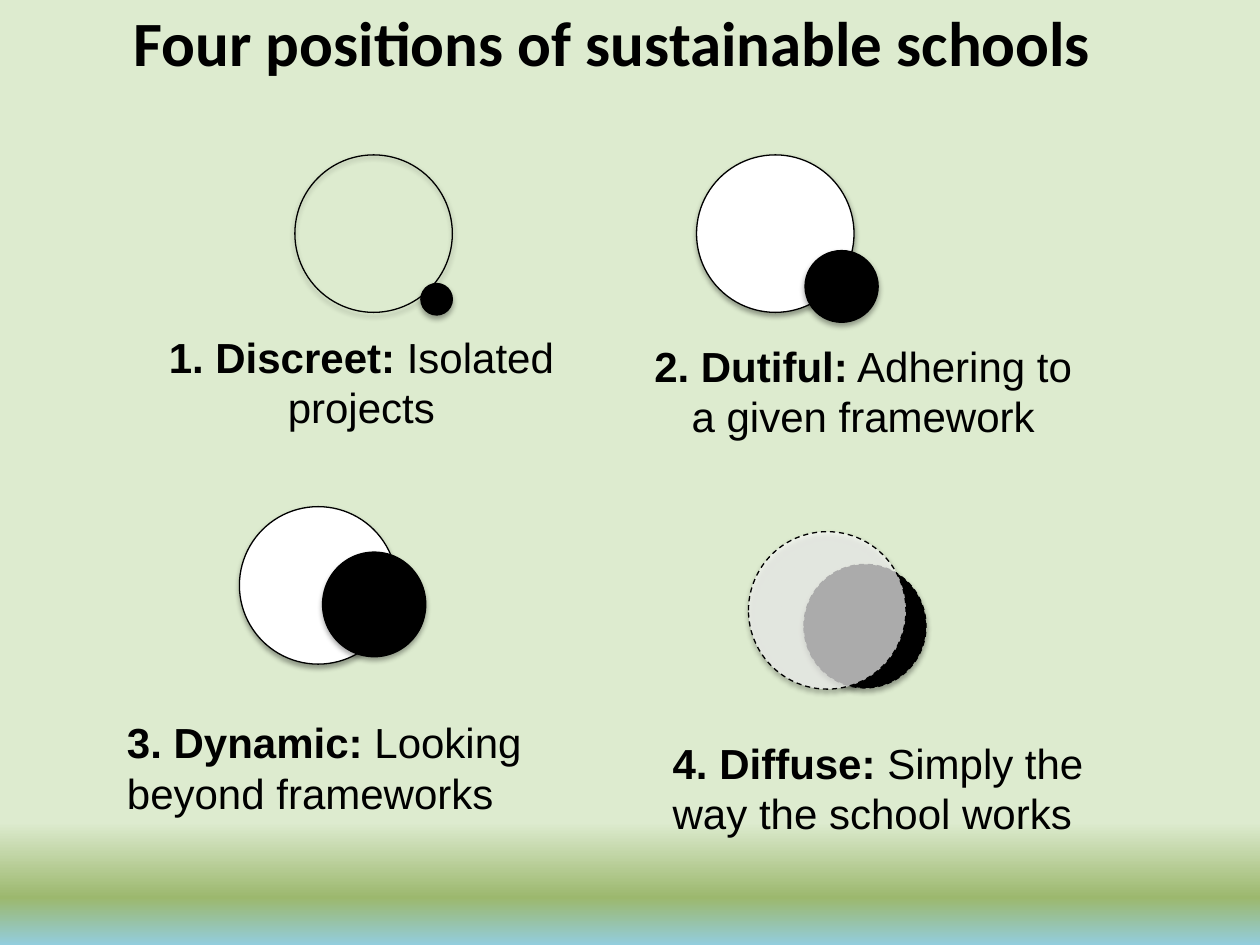
import lxml.etree
import pptx
import pptx.dml.color
import pptx.enum.dml
import pptx.enum.shapes
import pptx.enum.text
import pptx.oxml
import pptx.oxml.ns
import pptx.util

Pt = pptx.util.Pt
RGBColor = pptx.dml.color.RGBColor
ALIGN = pptx.enum.text.PP_ALIGN
ANCHOR = pptx.enum.text.MSO_ANCHOR
qn = pptx.oxml.ns.qn

BLACK = RGBColor(0x00, 0x00, 0x00)
WHITE = RGBColor(0xFF, 0xFF, 0xFF)
PALE_GREEN = RGBColor(0xDD, 0xEB, 0xCF)
GRASS = RGBColor(0x9C, 0xB8, 0x6E)
WATER = RGBColor(0x93, 0xCD, 0xDD)

SCHOOL = 90  # diameter of every large circle


def add_color(parent, color, alpha=None):
    """Append an RGB colour, with opacity in percent if given."""
    clr = lxml.etree.SubElement(parent, qn("a:srgbClr"), val=str(color))
    if alpha is not None:
        lxml.etree.SubElement(clr, qn("a:alpha"), val=str(alpha * 1000))


def paint_background(s):
    fill = s.background.fill
    fill.gradient()
    fill.gradient_angle = 270
    stops = next(s.background._cSld.iter(qn("a:gsLst")))
    for stop in list(stops):
        stops.remove(stop)
    for percent, color in ((87, PALE_GREEN), (95, GRASS), (100, WATER)):
        add_color(lxml.etree.SubElement(stops, qn("a:gs"), pos=str(percent * 1000)), color)


def add_title(s, text, left, top, width, height):
    sp = s.shapes.title
    sp.left, sp.top, sp.width, sp.height = Pt(left), Pt(top), Pt(width), Pt(height)
    tf = sp.text_frame
    tf.text = text
    tf.auto_size = pptx.enum.text.MSO_AUTO_SIZE.NONE
    tf.vertical_anchor = ANCHOR.TOP
    p = tf.paragraphs[0]
    p.alignment = ALIGN.CENTER
    p.font.name, p.font.size, p.font.bold = "Calibri", Pt(36), True
    p.font.color.rgb = BLACK


def add_circle(s, left, top, width, height, fill, alpha=None, dashed=False):
    sp = s.shapes.add_shape(pptx.enum.shapes.MSO_SHAPE.OVAL,
                            Pt(left), Pt(top), Pt(width), Pt(height))
    if fill is None:
        sp.fill.background()
    else:
        sp.fill.solid()
        sp.fill.fore_color.rgb = fill
        if alpha is not None:
            solid = sp._element.spPr.find(qn("a:solidFill"))
            solid.clear()
            add_color(solid, fill, alpha)
    sp.line.color.rgb = BLACK
    sp.line.width = Pt(0.75)
    if dashed:
        sp.line.dash_style = pptx.enum.dml.MSO_LINE.DASH
    sp.shadow.inherit = False
    effects = sp._element.spPr.find(qn("a:effectLst"))
    shadow = lxml.etree.SubElement(effects, qn("a:outerShdw"), blurRad=str(Pt(3.1)),
                                   dist=str(Pt(1.8)), dir="5400000", rotWithShape="0")
    add_color(shadow, BLACK, 35)


def add_caption(s, label, text, left, top, width, height, align):
    tf = s.shapes.add_textbox(Pt(left), Pt(top), Pt(width), Pt(height)).text_frame
    tf.word_wrap = True
    p = tf.paragraphs[0]
    p.alignment = align
    p.font.name, p.font.size = "Arial", Pt(24)
    p.font.color.rgb = BLACK
    for words, bold in ((label, True), (" " + text, False)):
        r = p.add_run()
        r.text = words
        r.font.bold = bold


def add_position(s, box, label, text, align, school_dx, caption_dy, dot,
                 fill=WHITE, diffuse=False):
    """Draw a school circle, its project dot (placed from the circle) and a caption."""
    left, top, width, height = box
    dx, dy, dot_w, dot_h = dot
    x = left + school_dx
    circles = [
        (x, top, SCHOOL, SCHOOL, fill, 67 if diffuse else None),
        (x + dx, top + dy, dot_w, dot_h, BLACK, None),
    ]
    if diffuse:
        circles.reverse()
    for circle in circles:
        add_circle(s, *circle, dashed=diffuse)
    add_caption(s, label, text, left, top + caption_dy, width, height - caption_dy, align)


def main():
    prs = pptx.Presentation()
    prs.slide_width, prs.slide_height = Pt(720), Pt(540)
    s = prs.slides.add_slide(prs.slide_layouts[5])
    paint_background(s)
    add_title(s, "Four positions of sustainable schools", 0, -1.5, 700, 90)
    add_position(s, (82, 88.5, 249, 130.5), "1. Discreet:", "Isolated projects",
                 ALIGN.CENTER, 86.5, 97.3, (72, 73.5, 18, 18), fill=None)
    add_position(s, (360, 88.5, 266.5, 133.5), "2. Dutiful:", "Adhering to a given framework",
                 ALIGN.CENTER, 38, 102.3, (62, 54.7, 41.8, 41))
    add_position(s, (65.5, 289.5, 244, 149), "3. Dynamic:", "Looking beyond frameworks",
                 ALIGN.LEFT, 71.3, 116.6, (47.5, 26, 59, 59.8))
    add_position(s, (377.3, 303.8, 260.6, 155), "4. Diffuse:", "Simply the way the school works",
                 ALIGN.LEFT, 50.4, 113.8, (31.7, 18.7, 69.8, 70.6), diffuse=True)
    prs.save("out.pptx")


if __name__ == "__main__":
    main()
